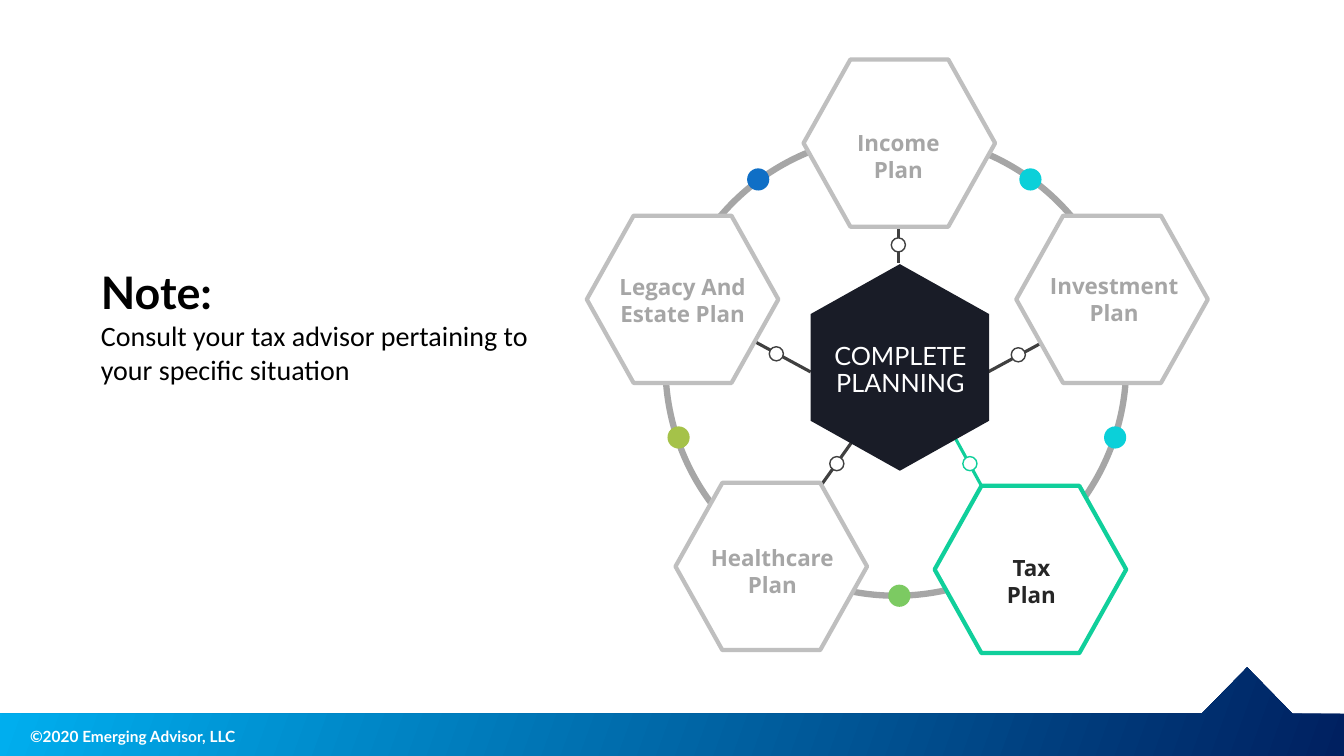
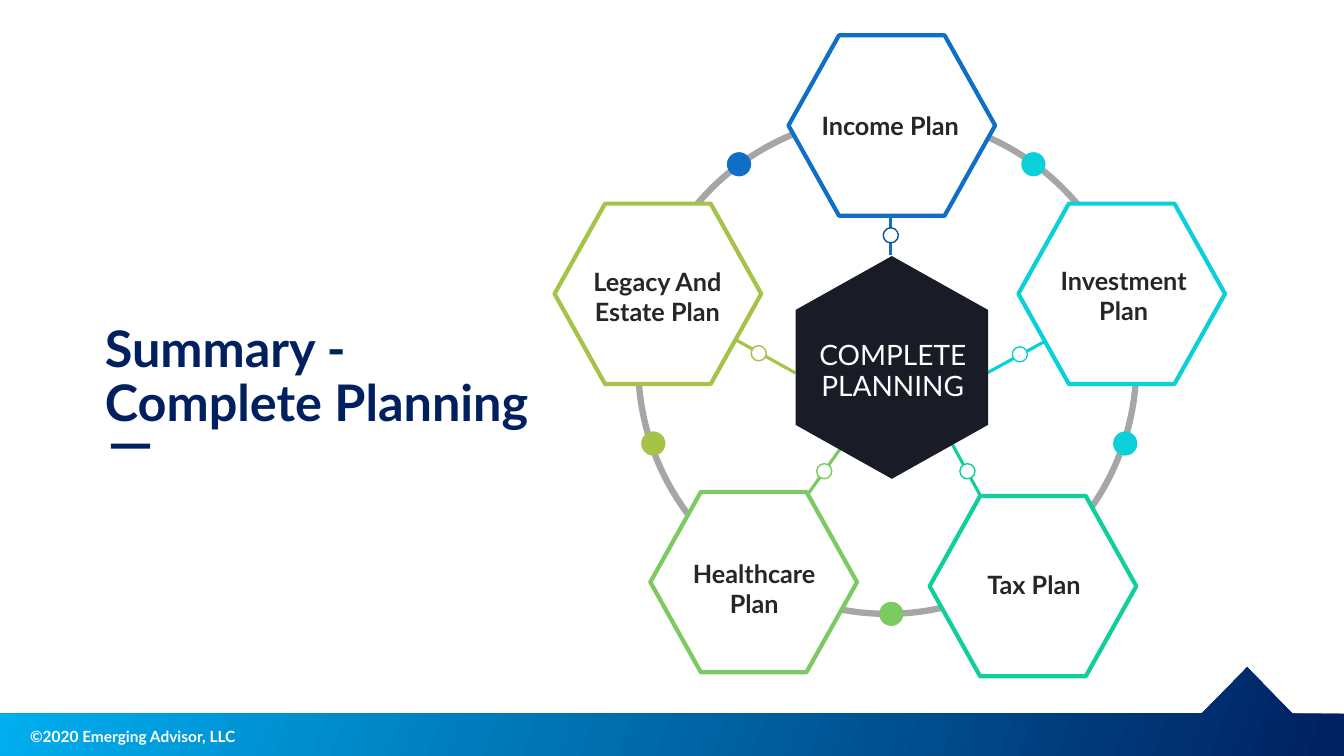
from lxml.etree import SubElement
from pptx import Presentation
from pptx.dml.color import RGBColor
from pptx.enum.shapes import MSO_CONNECTOR, MSO_SHAPE
from pptx.enum.text import MSO_ANCHOR, MSO_AUTO_SIZE, PP_ALIGN
from pptx.oxml.ns import qn
from pptx.util import Pt

PX = 9144  # EMU in one px, 100 px to the inch

WHITE = RGBColor(0xFF, 0xFF, 0xFF)
BLACK = RGBColor(0x00, 0x00, 0x00)
INK = RGBColor(0x26, 0x26, 0x26)
DARK = RGBColor(0x40, 0x40, 0x40)
GREY = RGBColor(0xA6, 0xA6, 0xA6)
PALE = RGBColor(0xBF, 0xBF, 0xBF)
NIGHT = RGBColor(0x19, 0x1C, 0x27)
NAVY = RGBColor(0x00, 0x20, 0x60)
SKY = RGBColor(0x00, 0xB0, 0xF0)
BLUE = RGBColor(0x0F, 0x6F, 0xC6)
DEEP = RGBColor(0x0B, 0x52, 0x92)
CYAN = RGBColor(0x0B, 0xD0, 0xD9)
MINT = RGBColor(0x10, 0xCF, 0x9B)
GREEN = RGBColor(0x7C, 0xCA, 0x62)
OLIVE = RGBColor(0xA5, 0xC2, 0x49)

FOOTER = "©2020 Emerging Advisor, LLC"
BAND = [(1237, 662), (1282, 708), (1333, 708), (1333, 750),
        (0, 750), (0, 708), (1192, 708)]

# Wheel parts, measured from the wheel's centre at scale 1.
# name, hue, rim of knob, hexagon centre, link ends, knob centre,
# label (left, top, width, height)
PLANS = [
    ("Income Plan", BLUE, DEEP, (4, -220),
     ((3, -137), (3, -101)), (3, -119), (-62, -234, 130, 27)),
    ("Investment Plan", CYAN, CYAN, (215, -65),
     ((151, -25), (92, 7)), (122, -10), (151, -92, 132, 54)),
    ("Legacy And Estate Plan", OLIVE, OLIVE, (-211, -65),
     ((-143, -25), (-84, 7)), (-118, -11), (-300, -91, 178, 54)),
    ("Healthcare Plan", GREEN, GREEN, (-123, 200),
     ((-42, 75), (-74, 120)), (-58, 98), (-195, 178, 146, 54)),
    ("Tax Plan", MINT, MINT, (134, 203),
     ((58, 70), (86, 121)), (74, 98), (90, 188, 90, 27)),
]
BEADS = [(BLUE, (-136, -184)), (CYAN, (134, -184)), (CYAN, (218, 72)),
         (OLIVE, (-215, 72)), (GREEN, (4, 229))]
CORE = ["COMPLETE", "PLANNING"]

SLIDES = [
    {"layout": 1, "title": ["Note:"], "box": (90, 258, 493, 63),
     "size": 32, "hue": BLACK, "space": 1.0,
     "body": "Consult your tax advisor pertaining to your specific situation",
     "wheel": {"mid": (888, 362), "scale": 1, "lit": ["Tax Plan"],
               "label": {"name": "Open Sans", "size": Pt(16), "bold": True},
               "core": {"name": "Lato", "size": Pt(18)}}},
    {"layout": 5, "title": ["Summary -", "Complete Planning"],
     "box": (94, 316, 475, 118), "size": 36, "hue": NAVY, "space": 0.9,
     "rule": (110, 440, 39, 5),
     "wheel": {"mid": (880, 362), "scale": 1.08,
               "lit": [plan[0] for plan in PLANS],
               "label": {"name": "Lato", "size": Pt(18), "bold": True},
               "core": {"name": "Lato", "size": Pt(20)}}},
]


def emu(nums):
    return [round(n) * PX for n in nums]


def put(item, form):
    """Set each attribute named in form."""
    for key, val in form.items():
        setattr(item, key, val)


def write(frame, lines, font, hue, para=None, pad=None):
    """Fill the frame with one paragraph, its lines split by breaks."""
    put(frame, {"word_wrap": True, "auto_size": MSO_AUTO_SIZE.NONE,
                "vertical_anchor": MSO_ANCHOR.TOP})
    if pad is not None:
        put(frame, dict.fromkeys(("margin_left", "margin_top",
                                  "margin_right", "margin_bottom"), pad))
    par = frame.paragraphs[0]
    put(par, para or {})
    for num, line in enumerate(lines):
        if num:
            par.add_line_break()
        run = par.add_run()
        run.text = line
        put(run.font, font)
        run.font.color.rgb = hue


def draw(shapes, kind, box, fill=None, line=None, wide=0):
    shape = shapes.add_shape(kind, *emu(box))
    shape.shadow.inherit = False
    if fill is None:
        shape.fill.background()
    else:
        shape.fill.solid()
        shape.fill.fore_color.rgb = fill
    if line is None:
        shape.line.fill.background()
    else:
        shape.line.color.rgb = line
        shape.line.width = Pt(wide)
    return shape


def join(shapes, start, end, hue):
    link = shapes.add_connector(MSO_CONNECTOR.STRAIGHT, *emu(start + end))
    link.line.color.rgb = hue
    link.line.width = Pt(2.25)
    SubElement(link.element.spPr, qn("a:effectLst"))


def brand(prs, slide):
    """Build the band and footer, then hand them to the slide master."""
    pen = slide.shapes.build_freeform(*BAND[0], scale=PX)
    pen.add_line_segments(BAND[1:], close=True)
    band = pen.convert_to_shape()
    band.shadow.inherit = False
    band.line.fill.background()
    band.fill.gradient()
    band.fill.gradient_angle = 160
    for stop, hue in zip(band.fill.gradient_stops, (NAVY, SKY)):
        stop.color.rgb = hue
    note = slide.shapes.add_textbox(*emu((20, 716, 237, 29)))
    write(note.text_frame, [FOOTER],
          {"name": "Lato", "size": Pt(11), "bold": True}, WHITE)
    note.text_frame.word_wrap = False
    for num, part in enumerate((band, note), 20):
        part.element.nvSpPr.cNvPr.set("id", str(num))
        prs.slide_master.shapes.element.append(part.element)


def wheel(slide, mid, scale, lit, label, core):
    shapes = slide.shapes.add_group_shape().shapes

    def spot(point):
        return tuple(m + scale * p for m, p in zip(mid, point))

    def disc(kind, point, size, *look):
        """Draw a shape centred on a point of the wheel."""
        wide, high = (scale * s for s in size)
        x, y = spot(point)
        return draw(shapes, kind, (x - wide / 2, y - high / 2, wide, high),
                    *look)

    def text(lines, box, font, hue, **more):
        left, top, wide, high = box
        area = shapes.add_textbox(
            *emu(spot((left, top)) + (scale * wide, scale * high)))
        para = {"alignment": PP_ALIGN.CENTER, **more.pop("para", {})}
        write(area.text_frame, lines, font, hue, para, **more)

    for name, hue, _, _, ends, _, _ in PLANS:
        join(shapes, *map(spot, ends), hue if name in lit else DARK)
    disc(MSO_SHAPE.OVAL, (0, 0), (457, 457), None, GREY, 4.5)
    for name, hue, _, cell, *_ in PLANS:
        hexa = disc(MSO_SHAPE.HEXAGON, cell, (190, 166), WHITE,
                    hue if name in lit else PALE, 3)
        hexa.adjustments[0] = 0.28
    hub = disc(MSO_SHAPE.HEXAGON, (4, 2), (205, 177), NIGHT)
    hub.adjustments[0] = 0.28
    hub.rotation = 90
    for name, _, rim, _, _, knob, _ in PLANS:
        disc(MSO_SHAPE.OVAL, knob, (14, 14), WHITE,
             rim if name in lit else DARK, 1)
    for hue, point in BEADS:
        disc(MSO_SHAPE.OVAL, point, (22, 22), hue)
    for name, *_, box in PLANS:
        text([name], box, label, INK if name in lit else GREY, pad=0)
    text(CORE, (-136, -26, 282, 60), core, WHITE,
         para={"line_spacing": 0.9})


def place(shape, box):
    put(shape, dict(zip(("left", "top", "width", "height"), emu(box))))


def main():
    prs = Presentation()
    prs.slide_width, prs.slide_height = emu((1333, 750))
    for num, page in enumerate(SLIDES):
        slide = prs.slides.add_slide(prs.slide_layouts[page["layout"]])
        if num == 0:
            brand(prs, slide)
        title = slide.shapes.title
        place(title, page["box"])
        write(title.text_frame, page["title"],
              {"name": "Lato", "size": Pt(page["size"]), "bold": True},
              page["hue"], {"alignment": PP_ALIGN.LEFT,
                            "line_spacing": page["space"]})
        if "body" in page:
            body = slide.placeholders[1]
            place(body, (90, 311, 493, 78))
            props = body.text_frame.paragraphs[0]._p.get_or_add_pPr()
            props.set("marL", "0")
            props.set("indent", "0")
            SubElement(props, qn("a:buNone"))
            write(body.text_frame, [page["body"]],
                  {"name": "Calibri", "size": Pt(20)}, BLACK,
                  {"space_before": Pt(0)})
        wheel(slide, **page["wheel"])
        if "rule" in page:
            draw(slide.shapes, MSO_SHAPE.RECTANGLE, page["rule"], NAVY)
    prs.save("out.pptx")


if __name__ == "__main__":
    main()
